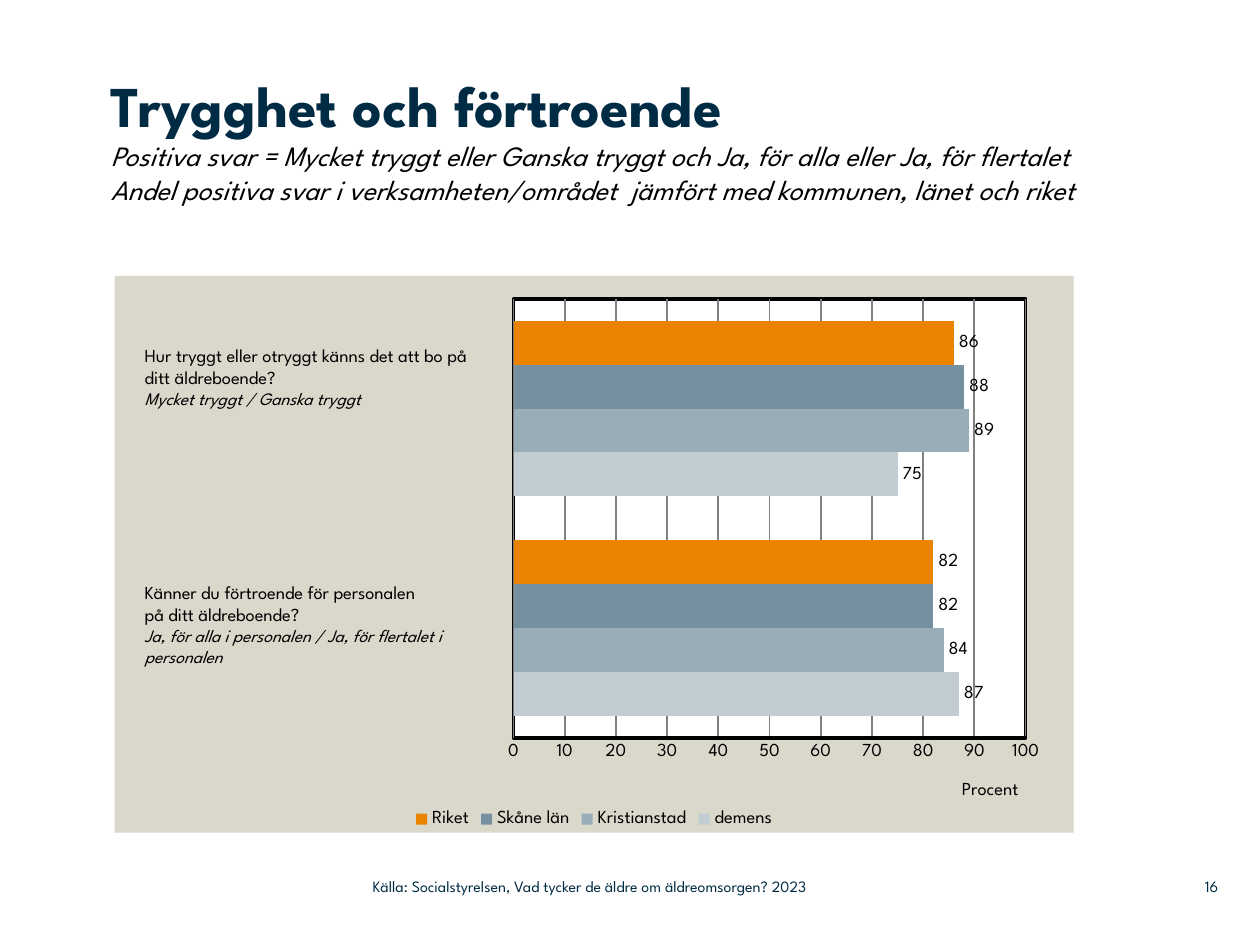
import pptx
import pptx.chart.data
import pptx.dml.color
import pptx.enum.chart
import pptx.enum.text
import pptx.oxml
import pptx.oxml.ns
import pptx.util

Pt = pptx.util.Pt
RGB = pptx.dml.color.RGBColor
qn = pptx.oxml.ns.qn

FONT = "League Spartan"
NAVY = RGB(0x00, 0x2B, 0x45)
BLACK = RGB(0, 0, 0)
GRID = RGB(0x80, 0x80, 0x80)
BEIGE = RGB(0xDA, 0xD7, 0xCB)
WHITE = RGB(0xFF, 0xFF, 0xFF)

TITLE = "Trygghet och förtroende"
SUBTITLE = [
    "Positiva svar = Mycket tryggt eller Ganska tryggt och Ja, för alla eller Ja, för flertalet",
    "Andel positiva svar i verksamheten/området  jämfört med kommunen, länet och riket",
]
# box, question lines, positive answers
QUESTIONS = [
    ((75.6, 193, 214.5, 58.3),
     ["Hur tryggt eller otryggt känns det att bo på ditt äldreboende?"],
     "Mycket tryggt / Ganska tryggt"),
    ((75.6, 328.3, 216, 70.6),
     ["Känner du förtroende för personalen", "på ditt äldreboende?"],
     "Ja, för alla i personalen / Ja, för flertalet i personalen"),
]
SERIES = [
    ("demens", (87, 75), RGB(0xC2, 0xCD, 0xD3)),
    ("Kristianstad", (84, 89), RGB(0x99, 0xAD, 0xB9)),
    ("Skåne län", (82, 88), RGB(0x75, 0x90, 0x9F)),
    ("Riket", (82, 86), RGB(0xE9, 0x83, 0x00)),
]
FOOTERS = [
    ((213, 496, 319, 21), "Källa: Socialstyrelsen, Vad tycker de äldre om äldreomsorgen? 2023",
     pptx.enum.text.PP_ALIGN.LEFT),
    ((662.4, 496, 33.8, 21), "16", pptx.enum.text.PP_ALIGN.RIGHT),
]
CHART_BOX = (65.5, 157.7, 548, 318.2)


def style(font, size=10.5, color=BLACK, bold=False, italic=False):
    font.name, font.size, font.bold, font.italic = FONT, Pt(size), bold, italic
    font.color.rgb = color


def add_run(p, text, **fmt):
    r = p.add_run()
    r.text = text
    style(r.font, **fmt)


def add_box(s, box):
    tf = s.shapes.add_textbox(*map(Pt, box)).text_frame
    tf.word_wrap = True
    return tf


def no_insets(tf):
    tf.margin_left = tf.margin_top = tf.margin_right = tf.margin_bottom = 0


def layout_xml(x, y, w=None, h=None):
    """Manual chart layout in fractions of the chart area."""
    target = '<c:layoutTarget val="inner"/>' if w else ""
    size = f'<c:w val="{w}"/><c:h val="{h}"/>' if w else ""
    return pptx.oxml.parse_xml(
        f'<c:layout {pptx.oxml.ns.nsdecls("c")}><c:manualLayout>{target}'
        f'<c:xMode val="edge"/><c:yMode val="edge"/><c:x val="{x}"/><c:y val="{y}"/>{size}'
        '</c:manualLayout></c:layout>')


def area_xml(fill, line=""):
    return pptx.oxml.parse_xml(
        f'<c:spPr {pptx.oxml.ns.nsdecls("c", "a")}><a:solidFill><a:srgbClr val="{fill}"/>'
        f'</a:solidFill>{line or "<a:ln><a:noFill/></a:ln>"}</c:spPr>')


def set_layout(parent, index, layout):
    for old in parent.findall(qn("c:layout")):
        parent.remove(old)
    parent.insert(index, layout)


def add_bar_chart(s):
    data = pptx.chart.data.CategoryChartData()
    data.categories = ["1", "2"]
    for name, values, _ in SERIES:
        data.add_series(name, values)
    chart = s.shapes.add_chart(
        pptx.enum.chart.XL_CHART_TYPE.BAR_CLUSTERED, *map(Pt, CHART_BOX), data).chart
    style(chart.font)
    chart.has_title = False
    chart.has_legend = True
    chart.legend.position = pptx.enum.chart.XL_LEGEND_POSITION.BOTTOM
    chart.legend.include_in_layout = False
    style(chart.legend.font)

    plot = chart.plots[0]
    plot.gap_width, plot.overlap, plot.vary_by_categories = 100, 0, False
    for series, (_, _, color) in zip(plot.series, SERIES):
        series.format.fill.solid()
        series.format.fill.fore_color.rgb = color
        labels = series.data_labels
        labels.show_value = True
        labels.position = pptx.enum.chart.XL_LABEL_POSITION.OUTSIDE_END
        style(labels.font)

    chart.category_axis.visible = False
    axis = chart.value_axis
    axis.minimum_scale, axis.maximum_scale, axis.major_unit = 0, 100, 10
    axis.major_tick_mark = pptx.enum.chart.XL_TICK_MARK.NONE
    axis.format.line.color.rgb = BLACK
    axis.format.line.width = Pt(2)
    axis.major_gridlines.format.line.color.rgb = GRID
    axis.major_gridlines.format.line.width = Pt(1)
    style(axis.tick_labels.font)
    add_run(axis.axis_title.text_frame.paragraphs[0], "Procent")
    set_layout(axis.axis_title.element, 1, layout_xml(0.88, 0.9))

    area = chart.element.find(qn("c:chart"))
    area.addnext(area_xml(BEIGE))
    plot_area = area.find(qn("c:plotArea"))
    set_layout(plot_area, 0, layout_xml(0.416, 0.041, 0.534, 0.789))
    plot_area.append(area_xml(
        WHITE, f'<a:ln w="{Pt(2)}"><a:solidFill><a:srgbClr val="{BLACK}"/></a:solidFill></a:ln>'))


def add_title(s):
    title = s.shapes.title
    title.left, title.top, title.width, title.height = map(Pt, (63.4, 39.6, 558, 118))
    tf = title.text_frame
    no_insets(tf)
    tf.word_wrap = True
    tf.auto_size = pptx.enum.text.MSO_AUTO_SIZE.NONE
    tf.vertical_anchor = pptx.enum.text.MSO_ANCHOR.TOP
    p = tf.paragraphs[0]
    p.alignment = pptx.enum.text.PP_ALIGN.LEFT
    add_run(p, TITLE, size=33, color=NAVY, bold=True)
    for line in SUBTITLE:
        p.add_line_break()
        add_run(p, line, size=16, italic=True)


def main():
    prs = pptx.Presentation()
    prs.slide_width, prs.slide_height = Pt(720), Pt(540)
    s = prs.slides.add_slide(prs.slide_layouts[5])
    add_bar_chart(s)
    add_title(s)
    for box, lines, answers in QUESTIONS:
        tf = add_box(s, box)
        p = tf.paragraphs[0]
        for line in lines:
            add_run(p, line)
            p = tf.add_paragraph()
        add_run(p, answers, size=10, italic=True)
    for box, text, align in FOOTERS:
        tf = add_box(s, box)
        no_insets(tf)
        tf.vertical_anchor = pptx.enum.text.MSO_ANCHOR.MIDDLE
        p = tf.paragraphs[0]
        p.alignment = align
        add_run(p, text, size=9, color=NAVY)
    prs.save("out.pptx")


if __name__ == "__main__":
    main()
